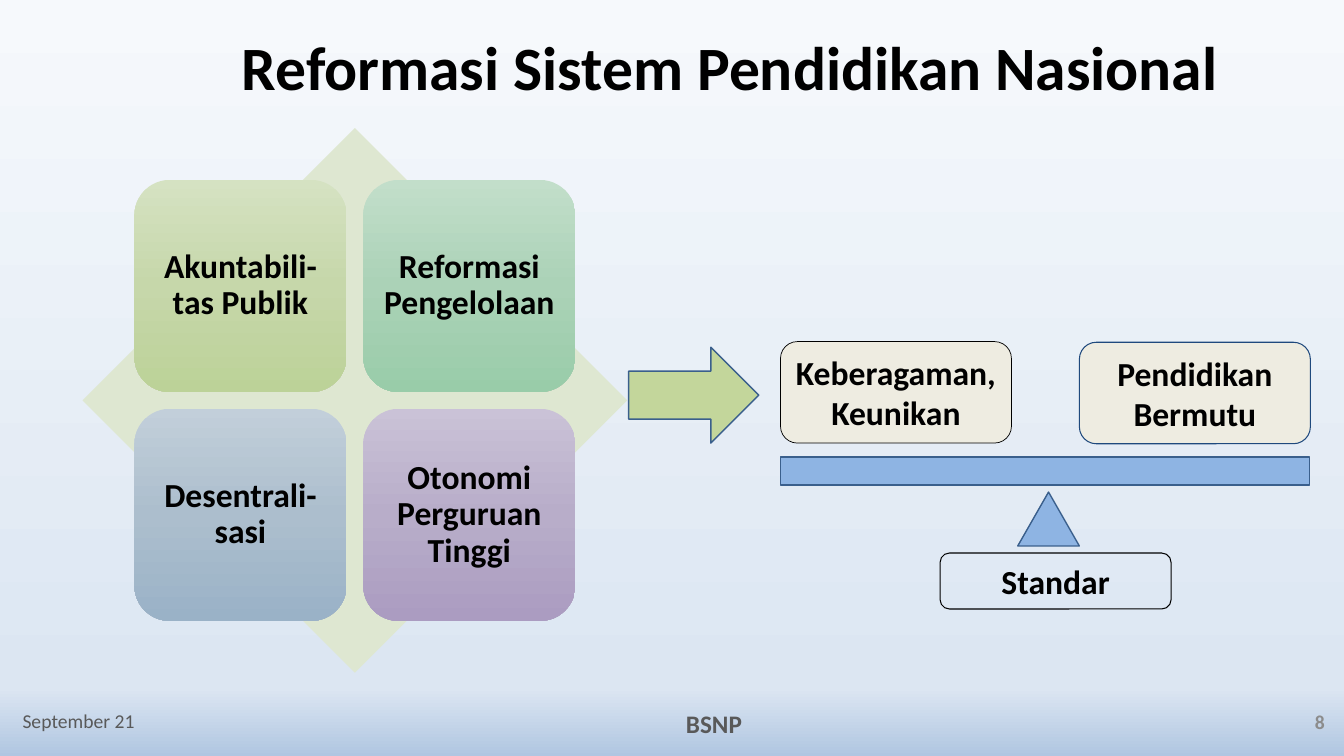
from lxml.etree import SubElement
from pptx import Presentation
from pptx.dml.color import RGBColor
from pptx.enum.shapes import MSO_SHAPE as SHAPE
from pptx.enum.text import MSO_ANCHOR as ANCHOR, MSO_AUTO_SIZE as AUTO, PP_ALIGN as ALIGN
from pptx.oxml.ns import qn
from pptx.util import Pt

# Content
TITLE = "Reformasi Sistem Pendidikan Nasional"
BACKGROUND = [(0, "F6F9FC"), (91, "DCE6F2"), (100, "B0C6E1")]
PILLARS = [  # text, gradient from top to bottom; two per row
    ("Akuntabili-tas Publik", ("D5E2C2", "C6D7AA", "BCD298")),
    ("Reformasi Pengelolaan", ("C2DECA", "ABD2B7", "99CCA9")),
    ("Desentrali-sasi", ("C2CFDA", "ACBECD", "9AB2C7")),
    ("Otonomi Perguruan Tinggi", ("CAC2D7", "B8ADC9", "AB9CC1")),
]
BALANCE = [  # shape, box, fill, line colour, line width
    (SHAPE.RIGHT_ARROW, (449, 248, 93, 68.5), "C3D69B", "3A5F8C", 1),
    (SHAPE.RECTANGLE, (557.5, 326.5, 378, 20), "8EB4E3", "3A5F8C", 1),
    (SHAPE.ISOSCELES_TRIANGLE, (727, 351.5, 44, 38.5), "8EB4E3", "3A5F8C", 1),
]
LABELS = [  # text, box, fill, line colour, line width
    ("Keberagaman, Keunikan", (557.5, 244, 165, 72.5), "EEECE1", "000000", 0.5),
    ("Pendidikan Bermutu", (771, 244.5, 165, 72.5), "EEECE1", "1F497D", 0.75),
    ("Standar", (671.5, 395, 165, 40), None, "000000", 0.75),
]
FOOTERS = [  # text, box, alignment, size, colour, bold
    ("September 21", (9, 500.5, 216, 29), ALIGN.LEFT, 14, "595959", False),
    ("BSNP", (348, 502, 324, 29), ALIGN.CENTER, 18, "595959", True),
    ("8", (737.5, 501, 216, 29), ALIGN.RIGHT, 14, "8C8C8C", True),
]

# Pillar grid: four tiles centred on a diamond
DIAMOND = (59, 91.5, 389, 389)
TILE, GAP = 151.5, 12
GRID_LEFT = DIAMOND[0] + DIAMOND[2] / 2 - TILE - GAP / 2
GRID_TOP = DIAMOND[1] + DIAMOND[3] / 2 - TILE - GAP / 2


def rgb(value):
    return RGBColor.from_string(value)


def points(box):
    return [Pt(v) for v in box]


def set_gradient(fill, element, stops):
    fill.gradient()
    fill.gradient_angle = 270
    stop_list = element.find(".//" + qn("a:gsLst"))
    for old in list(stop_list):
        stop_list.remove(old)
    for percent, color in stops:
        stop = SubElement(stop_list, qn("a:gs"), pos=str(percent * 1000))
        SubElement(stop, qn("a:srgbClr"), val=color)


def write(sp, text, size, color="000000", bold=True, align=ALIGN.CENTER,
          spacing=1.0, margin=None):
    tf = sp.text_frame
    tf.text = text
    tf.word_wrap = True
    tf.auto_size = AUTO.NONE
    tf.vertical_anchor = ANCHOR.MIDDLE
    if margin is not None:
        tf.margin_left = tf.margin_right = Pt(margin)
        tf.margin_top = tf.margin_bottom = Pt(margin)
    p = tf.paragraphs[0]
    p.alignment = align
    p.line_spacing = spacing
    font = p.runs[0].font
    font.name, font.size, font.bold = "Calibri", Pt(size), bold
    font.color.rgb = rgb(color)


def add_shape(kind, box, fill=None, line=None, width=1):
    sp = slide.shapes.add_shape(kind, *points(box))
    sp.shadow.inherit = False
    if fill:
        sp.fill.solid()
        sp.fill.fore_color.rgb = rgb(fill)
    else:
        sp.fill.background()
    if line:
        sp.line.color.rgb = rgb(line)
        sp.line.width = Pt(width)
    else:
        sp.line.fill.background()
    return sp


prs = Presentation()
prs.slide_width, prs.slide_height = Pt(960), Pt(540)
slide = prs.slides.add_slide(prs.slide_layouts[5])
set_gradient(slide.background.fill, slide.element, BACKGROUND)

# Title
title = slide.shapes.title
title.left, title.top, title.width, title.height = points((107.5, 13, 828.5, 75))
write(title, TITLE, 44, spacing=0.9)

# Reform pillars
add_shape(SHAPE.DIAMOND, DIAMOND, "DEE7D1")
for i, (text, colors) in enumerate(PILLARS):
    row, col = divmod(i, 2)
    step = TILE + GAP
    tile = add_shape(SHAPE.ROUNDED_RECTANGLE,
                     (GRID_LEFT + col * step, GRID_TOP + row * step, TILE, TILE))
    set_gradient(tile.fill, tile.element, zip((0, 50, 100), colors))
    write(tile, text, 24, spacing=0.9, margin=7.2)

# Arrow and balance
for part in BALANCE:
    add_shape(*part)
for text, *style in LABELS:
    label = add_shape(SHAPE.ROUNDED_RECTANGLE, *style)
    write(label, text, 24, margin=4)

# Footer
for text, box, align, size, color, bold in FOOTERS:
    write(slide.shapes.add_textbox(*points(box)), text, size, color, bold, align)

prs.save("out.pptx")
